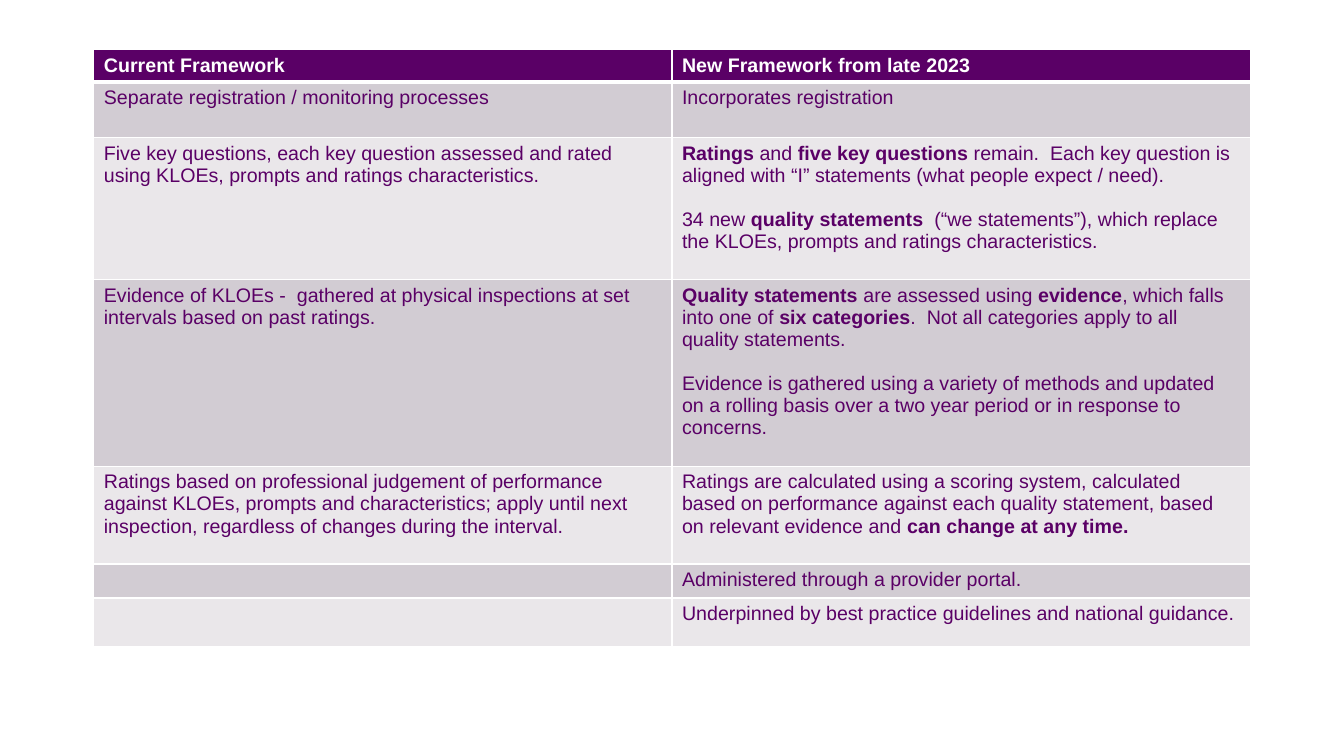
from lxml.etree import SubElement
from pptx import Presentation
from pptx.dml.color import RGBColor
from pptx.oxml import parse_xml
from pptx.oxml.ns import nsdecls, qn
from pptx.util import Pt

PURPLE = RGBColor(0x5A, 0x00, 0x66)
DARK_BAND = RGBColor(0xD2, 0xCC, 0xD3)
LIGHT_BAND = RGBColor(0xEA, 0xE7, 0xEA)
WHITE = RGBColor(0xFF, 0xFF, 0xFF)

# Row height, left cell, right cell; each cell is a list of paragraphs, ** marks bold
ROWS = [
    (23, ["**Current Framework**"], ["**New Framework from late 2023**"]),
    (39.5, ["Separate registration / monitoring processes"],
     ["Incorporates registration"]),
    (101.5, ["Five key questions, each key question assessed and rated using "
             "KLOEs, prompts and ratings characteristics."],
     ["**Ratings** and **five key questions **remain.  Each key question is "
      "aligned with “I” statements (what people expect / need).",
      "34 new **quality statements ** (“we statements”), which replace the "
      "KLOEs, prompts and ratings characteristics."]),
    (133.5, ["Evidence of KLOEs -  gathered at physical inspections at set "
             "intervals based on past ratings."],
     ["**Quality statements **are assessed using **evidence**, which falls "
      "into one of **six categories**.  Not all categories apply to all "
      "quality statements.",
      "Evidence is gathered using a variety of methods and updated on a "
      "rolling basis over a two year period or in response to concerns."]),
    (70, ["Ratings based on professional judgement of performance against "
          "KLOEs, prompts and characteristics; apply until next inspection, "
          "regardless of changes during the interval."],
     ["Ratings are calculated using a scoring system, calculated based on "
      "performance against each quality statement, based on relevant evidence "
      "and **can change at any time.**"]),
    (23.5, [], ["Administered through a provider portal."]),
    (35, [], ["Underpinned by best practice guidelines and national guidance."]),
    (24, [], []),
]


class SlideBuilder:
    """Holds the text style and the current slide."""

    text_format = {"name": "Arial", "size": Pt(14)}
    paragraph_gap = Pt(16)

    def __init__(self, prs):
        self.s = prs.slides.add_slide(prs.slide_layouts[6])

    def table(self, left, top, col_width, rows):
        height = sum(row[0] for row in rows)
        frame = self.s.shapes.add_table(
            len(rows), 2, Pt(left), Pt(top), Pt(2 * col_width), Pt(height))
        table = frame.table
        table.horz_banding = False
        for column in table.columns:
            column.width = Pt(col_width)
        for i, (row_height, *texts) in enumerate(rows):
            table.rows[i].height = Pt(row_height)
            for cell, paragraphs in zip(table.rows[i].cells, texts):
                self.fill(cell, i, len(rows) - 1)
                self.borders(cell, 3 if i == 0 else 1, 3 if i == 1 else 1)
                self.text(cell.text_frame, paragraphs, WHITE if i == 0 else PURPLE)

    def fill(self, cell, row, last_row):
        if row == last_row:
            cell.fill.background()
            return
        cell.fill.solid()
        band = DARK_BAND if row % 2 else LIGHT_BAND
        cell.fill.fore_color.rgb = PURPLE if row == 0 else band

    def borders(self, cell, bottom, top):
        tc_pr = cell._tc.get_or_add_tcPr()
        widths = {"lnL": 1, "lnR": 1, "lnT": top, "lnB": bottom}
        for i, (side, width) in enumerate(widths.items()):
            tc_pr.insert(i, parse_xml(
                f'<a:{side} {nsdecls("a")} w="{Pt(width)}"><a:solidFill>'
                f'<a:srgbClr val="{WHITE}"/></a:solidFill></a:{side}>'))

    def text(self, tf, paragraphs, color):
        if not paragraphs:
            # Keeps an empty cell at the table's text size
            SubElement(tf.paragraphs[0]._p, qn("a:endParaRPr"), sz="1400")
        for i, text in enumerate(paragraphs):
            p = tf.add_paragraph() if i else tf.paragraphs[0]
            if i:
                p.space_before = self.paragraph_gap
            for j, part in enumerate(text.split("**")):
                if part:
                    self.run(p, part, color, bold=j % 2 == 1)

    def run(self, p, text, color, bold):
        r = p.add_run()
        r.text = text
        for key, value in {**self.text_format, "bold": bold}.items():
            setattr(r.font, key, value)
        r.font.color.rgb = color


def main():
    prs = Presentation()
    prs.slide_width, prs.slide_height = Pt(960), Pt(540)

    # Framework comparison
    SlideBuilder(prs).table(67, 35.5, 413, ROWS)

    prs.save("out.pptx")


if __name__ == "__main__":
    main()
